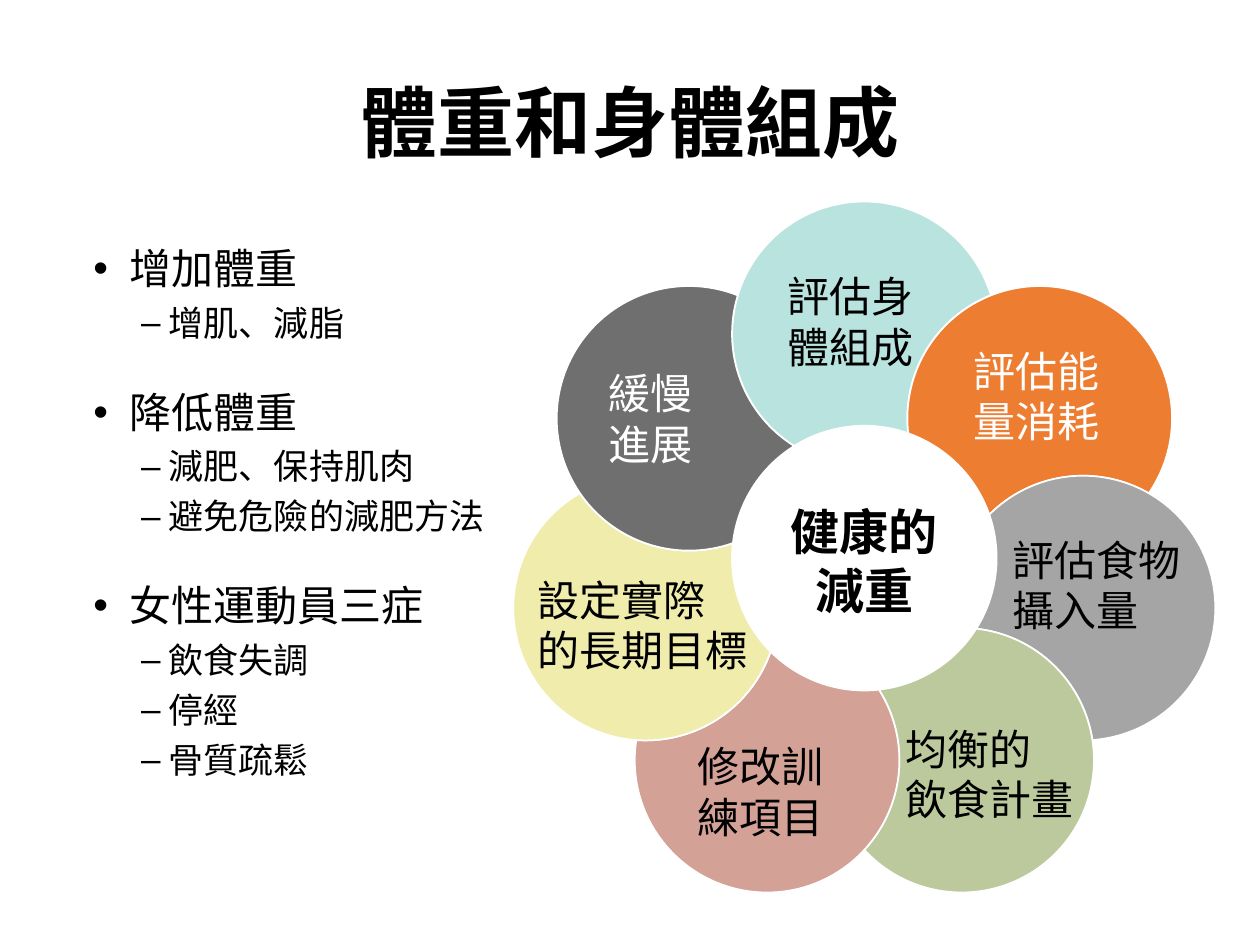
import math
from dataclasses import dataclass

from lxml import etree
from pptx import Presentation
from pptx import util as u
from pptx.dml.color import RGBColor
from pptx.enum import text
from pptx.oxml.ns import qn

FONT = "Arial"
COLORS = {
    "black": "000000", "white": "FFFFFF", "teal": "B9E3DF",
    "orange": "ED7D31", "gray": "A5A5A5", "green": "BCC99D",
    "pink": "D3A196", "yellow": "F0ECAC", "charcoal": "6F6F6F",
}

# Flower geometry, in inches and degrees
CENTER = (6.86, 4.43)
RADIUS = 1.05
RING = 1.78
STEP = 360 / 7
# Half-angles of the arcs where a petal meets the hub and its neighbour
HUB_HALF = math.degrees(math.acos(RING / 2 / RADIUS))
NEXT_HALF = math.degrees(
    math.acos(RING * math.sin(math.radians(STEP / 2)) / RADIUS))


@dataclass
class Label:
    words: str
    left: float
    top: float
    width: float
    height: float = 0.91
    size: float = 24
    color: str = "black"
    bold: bool = False
    align: text.PP_ALIGN = text.PP_ALIGN.LEFT
    anchor: text.MSO_ANCHOR = text.MSO_ANCHOR.TOP


@dataclass
class Petal:
    fill: str
    label: Label


@dataclass
class Level:
    size: float
    margin: float
    indent: float
    before: float
    bullet: str


TITLE = Label("體重和身體組成", 0, 0.54, 10, 0.83, 44, bold=True,
              align=text.PP_ALIGN.CENTER, anchor=text.MSO_ANCHOR.BOTTOM)
HUB = Label("健康的減重", 6.09, 3.93, 1.54, 1.04, 28, bold=True,
            align=text.PP_ALIGN.CENTER)

# Clockwise from the top
PETALS = [
    Petal("teal", Label("評估身體組成", 6.15, 2.1, 1.39)),
    Petal("orange", Label("評估能量消耗", 7.63, 2.69, 1.39, color="white")),
    Petal("gray", Label("評估食物攝入量", 7.94, 4.19, 1.58)),
    Petal("green", Label("均衡的\v飲食計畫", 7.09, 5.69, 1.64)),
    Petal("pink", Label("修改訓練項目", 5.44, 5.83, 1.39)),
    Petal("yellow", Label("設定實際\v的長期目標", 4.17, 4.51, 2)),
    Petal("charcoal", Label("緩慢\v進展", 4.73, 2.87, 1.39, color="white")),
]

LEVELS = [Level(24, 0.29, -0.29, 27.5, "•"), Level(20, 0.6, -0.22, 7, "–")]
TOPICS = {
    "增加體重": ["增肌、減脂"],
    "降低體重": ["減肥、保持肌肉", "避免危險的減肥方法"],
    "女性運動員三症": ["飲食失調", "停經", "骨質疏鬆"],
}


def rgb(name: str) -> RGBColor:
    return RGBColor.from_string(COLORS[name])


def add_box(slide, left: float, top: float, width: float, height: float):
    box = slide.shapes.add_textbox(
        u.Inches(left), u.Inches(top), u.Inches(width), u.Inches(height))
    box.text_frame.word_wrap = True
    return box


def style(paragraph, size: float, color: str = "black", bold: bool = False) -> None:
    font = paragraph.font
    font.name, font.size, font.bold = FONT, u.Pt(size), bold
    font.color.rgb = rgb(color)


def add_label(slide, label: Label) -> None:
    frame = add_box(slide, label.left, label.top, label.width, label.height).text_frame
    frame.vertical_anchor = label.anchor
    paragraph = frame.paragraphs[0]
    paragraph.text = label.words
    paragraph.alignment = label.align
    style(paragraph, label.size, label.color, label.bold)


def fill_bullet(paragraph, words: str, depth: int, first: bool) -> None:
    level = LEVELS[depth]
    paragraph.text = words
    paragraph.level = depth
    paragraph.line_spacing = 0.9
    paragraph.space_before = u.Pt(0 if first else level.before)
    props = paragraph._p.get_or_add_pPr()
    props.set("marL", str(u.Inches(level.margin)))
    props.set("indent", str(u.Inches(level.indent)))
    etree.SubElement(props, qn("a:buFont"), typeface=FONT)
    etree.SubElement(props, qn("a:buChar"), char=level.bullet)
    style(paragraph, level.size)


def add_topics(slide) -> None:
    frame = add_box(slide, 0.54, 1.87, 5.25, 5.92).text_frame
    frame.margin_left, frame.margin_top = u.Inches(0.2), u.Inches(0.1)
    rows = [(words, depth) for topic, points in TOPICS.items()
            for words, depth in [(topic, 0)] + [(point, 1) for point in points]]
    for index, (words, depth) in enumerate(rows):
        paragraph = frame.add_paragraph() if index else frame.paragraphs[0]
        fill_bullet(paragraph, words, depth, index == 0)


def polar(origin: tuple, radius: float, angle: float) -> tuple:
    turn = math.radians(angle)
    return (origin[0] + radius * math.cos(turn), origin[1] + radius * math.sin(turn))


def arc(origin: tuple, start: float, end: float) -> list:
    """Give two control points and an end point for each curve of the arc."""
    count = math.ceil(abs(end - start) / 45)
    sweep = (end - start) / count
    reach = 4 / 3 * math.tan(math.radians(sweep / 4))
    handle = RADIUS * math.hypot(1, reach)
    lean = math.degrees(math.atan(reach))
    points = []
    for i in range(count):
        begin, finish = start + i * sweep, start + (i + 1) * sweep
        points += [polar(origin, handle, begin + lean),
                   polar(origin, handle, finish - lean),
                   polar(origin, RADIUS, finish)]
    return points


def bend_lines(shape) -> None:
    """Join each three line segments into one cubic curve."""
    lines = list(shape._element.iter(qn("a:lnTo")))
    for first, second, third in zip(lines[::3], lines[1::3], lines[2::3]):
        curve = etree.Element(qn("a:cubicBezTo"))
        first.addprevious(curve)
        for line in (first, second, third):
            curve.append(line[0])
            line.getparent().remove(line)


def add_petal(slide, index: int, fill: str) -> None:
    """Draw a disc cut by the next disc clockwise and by the round hub."""
    angle = -90 + index * STEP
    disc = polar(CENTER, RING, angle)
    following = polar(CENTER, RING, angle + STEP)
    outer = 90 + STEP / 2  # direction from this disc to the next
    hub_side = 180 + HUB_HALF
    points = (
        arc(disc, angle + hub_side, angle + 360 + outer - NEXT_HALF)
        + arc(following, angle + 180 + outer + NEXT_HALF, angle + STEP + hub_side)
        + arc(CENTER, angle + STEP - HUB_HALF, angle - HUB_HALF))
    corners = [(u.Inches(x), u.Inches(y)) for x, y in points]
    builder = slide.shapes.build_freeform(*corners[-1])
    builder.add_line_segments(corners, close=False)
    shape = builder.convert_to_shape()
    bend_lines(shape)
    shape.shadow.inherit = False
    shape.fill.solid()
    shape.fill.fore_color.rgb = rgb(fill)
    shape.line.color.rgb = rgb("white")
    shape.line.width = u.Pt(1)


def main() -> None:
    deck = Presentation()
    deck.slide_width, deck.slide_height = u.Inches(10), u.Inches(7.5)
    slide = deck.slides.add_slide(deck.slide_layouts[6])

    # Title and bullet list
    add_label(slide, TITLE)
    add_topics(slide)

    # Flower: petals first, then their labels
    for index, petal in enumerate(PETALS):
        add_petal(slide, index, petal.fill)
    for label in [HUB] + [petal.label for petal in PETALS]:
        add_label(slide, label)

    deck.save("out.pptx")


if __name__ == "__main__":
    main()
